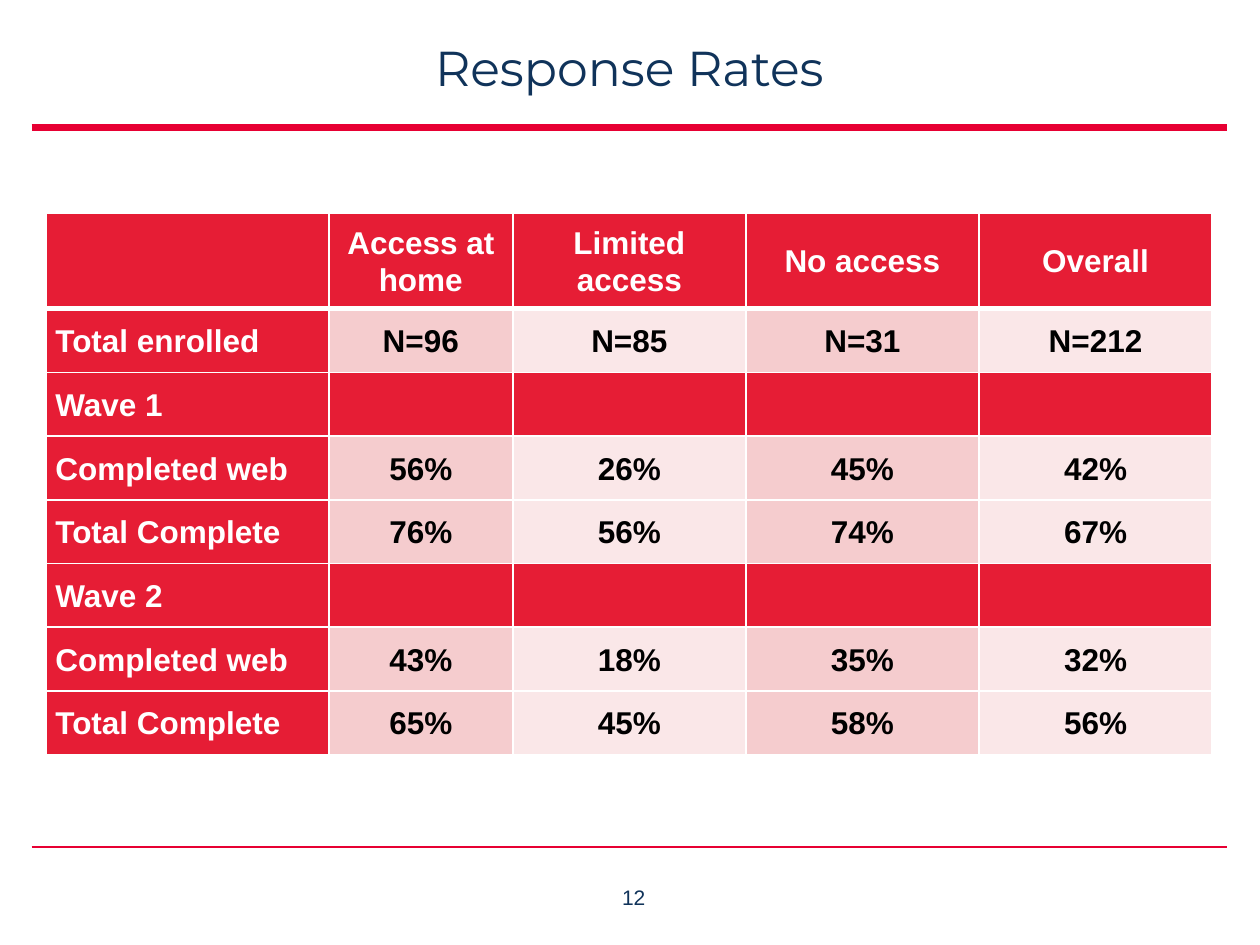
from lxml.etree import SubElement
from pptx import Presentation
from pptx.dml.color import RGBColor
from pptx.enum.shapes import MSO_CONNECTOR
from pptx.enum.text import MSO_ANCHOR, PP_ALIGN
from pptx.oxml import parse_xml
from pptx.oxml.ns import nsdecls, qn
from pptx.util import Inches, Pt

# Content
TITLE = "Response Rates"
PAGE_NUMBER = "12"
ROWS = [
    ("", "Access at home", "Limited access", "No access", "Overall"),
    ("Total enrolled", "N=96", "N=85", "N=31", "N=212"),
    ("Wave 1", "", "", "", ""),
    ("Completed web", "56%", "26%", "45%", "42%"),
    ("Total Complete", "76%", "56%", "74%", "67%"),
    ("Wave 2", "", "", "", ""),
    ("Completed web", "43%", "18%", "35%", "32%"),
    ("Total Complete", "65%", "45%", "58%", "56%"),
]

# Style
NAVY, RULE_RED, TABLE_RED = "10335A", "E70033", "E61D35"
WHITE, BLACK = "FFFFFF", "000000"
BANDS = ("FAE7E8", "F5CCCE")  # even and odd columns
COLUMN_WIDTHS = (2.24, 1.46, 1.85, 1.85, 1.85)
TABLE_HEIGHT, HEADER_HEIGHT = 4.3, 0.76


def color(value):
    return RGBColor.from_string(value)


def set_font(paragraph, name, size, value, bold=False):
    font = paragraph.font
    font.name, font.size, font.bold = name, Pt(size), bold
    font.color.rgb = color(value)


def add_text(page, text, place, name, size, inset, wrap):
    box = page.shapes.add_textbox(*map(Inches, place))
    frame = box.text_frame
    frame.word_wrap = wrap
    frame.margin_left = frame.margin_right = Inches(inset * 2)
    frame.margin_top = frame.margin_bottom = Inches(inset)
    para = frame.paragraphs[0]
    para.text = text
    para.alignment = PP_ALIGN.CENTER
    set_font(para, name, size, NAVY)


def add_rule(page, y, width):
    line = page.shapes.add_connector(
        MSO_CONNECTOR.STRAIGHT, Inches(0.25), Inches(y), Inches(9.74), Inches(y))
    line.line.color.rgb = color(RULE_RED)
    line.line.width = Pt(width)
    SubElement(line._element.spPr, qn("a:effectLst"))


def set_borders(cell, top, bottom):
    properties = cell._tc.get_or_add_tcPr()
    sides = (("lnL", 1), ("lnR", 1), ("lnT", top), ("lnB", bottom))
    for position, (side, width) in enumerate(sides):
        properties.insert(position, parse_xml(
            f'<a:{side} {nsdecls("a")} w="{Pt(width)}"><a:solidFill>'
            f'<a:srgbClr val="{WHITE}"/></a:solidFill></a:{side}>'))


def fill_cell(cell, text, row, column):
    is_red = row == 0 or column == 0 or not text
    cell.fill.solid()
    cell.fill.fore_color.rgb = color(TABLE_RED if is_red else BANDS[column % 2])
    set_borders(cell, top=3 if row == 1 else 1, bottom=3 if row == 0 else 1)
    if not text:
        return
    cell.vertical_anchor = MSO_ANCHOR.MIDDLE
    cell.margin_left = cell.margin_right = Inches(0.07)
    cell.margin_top = cell.margin_bottom = 0
    para = cell.text_frame.paragraphs[0]
    para.text = text
    para.alignment = PP_ALIGN.CENTER if column else PP_ALIGN.LEFT
    para.line_spacing = 1.07
    para.space_after = Pt(8)
    set_font(para, "Arial", 18, WHITE if is_red else BLACK, bold=True)


def add_rates_table(page):
    table = page.shapes.add_table(
        len(ROWS), len(COLUMN_WIDTHS), Inches(0.37), Inches(1.69),
        Inches(sum(COLUMN_WIDTHS)), Inches(TABLE_HEIGHT)).table
    for column, width in zip(table.columns, COLUMN_WIDTHS):
        column.width = Inches(width)
    body_height = (TABLE_HEIGHT - HEADER_HEIGHT) / (len(ROWS) - 1)
    for row, texts in enumerate(ROWS):
        table.rows[row].height = Inches(body_height if row else HEADER_HEIGHT)
        for column, text in enumerate(texts):
            fill_cell(table.cell(row, column), text, row, column)


def main():
    deck = Presentation()
    deck.slide_width, deck.slide_height = Inches(10), Inches(7.5)
    page = deck.slides.add_slide(deck.slide_layouts[6])

    # Rules and page number
    add_rule(page, 1.01, 4)
    add_rule(page, 6.72, 1)
    add_text(page, PAGE_NUMBER, (4.53, 6.97, 1, 0.38), "Arial", 12, 0.05, False)

    # Table and title
    add_rates_table(page)
    add_text(page, TITLE, (0.25, 0.3, 9.49, 0.71), "Montserrat", 28, 0, True)

    deck.save("out.pptx")


if __name__ == "__main__":
    main()
